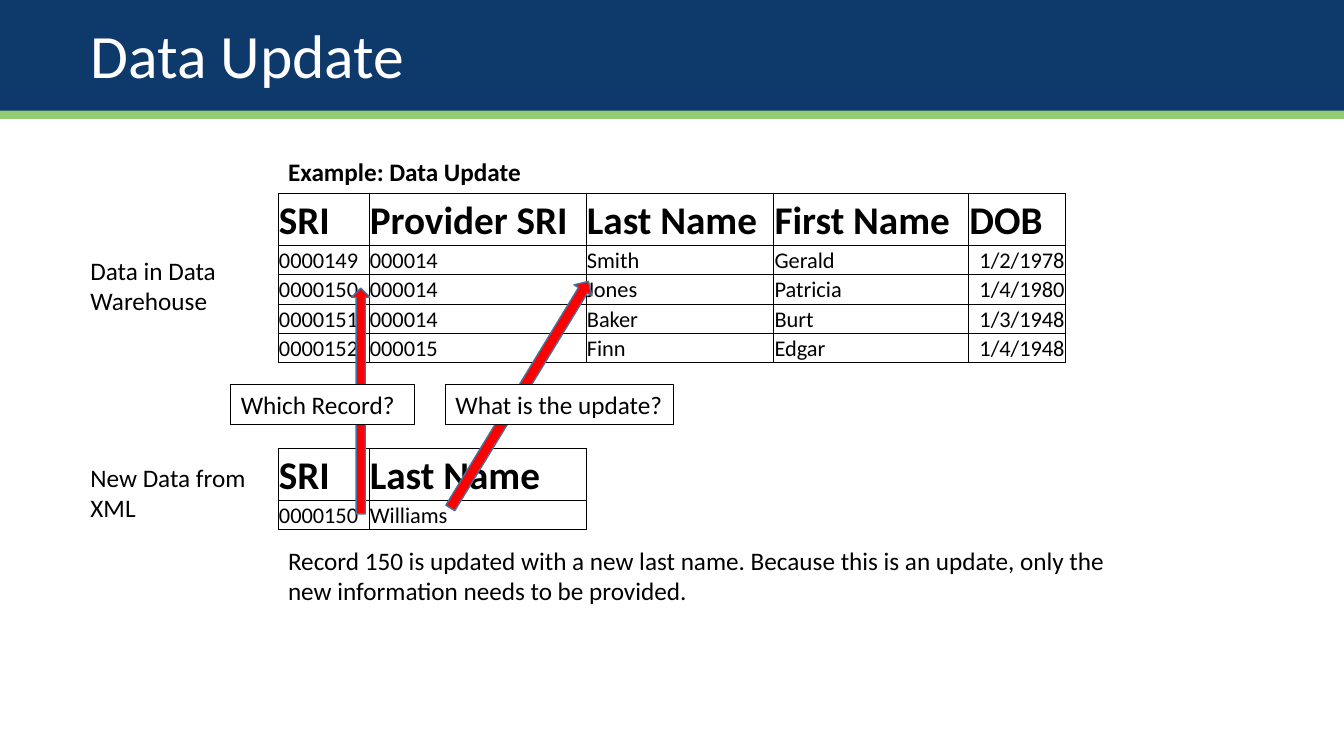
import math
from dataclasses import dataclass

from lxml import etree
from pptx import Presentation
from pptx.dml.color import RGBColor
from pptx.enum import shapes, text
from pptx.oxml import ns
from pptx.util import Cm, Pt


@dataclass(frozen=True)
class Theme:
    font: str = "Calibri"
    title_size: int = 44
    header_size: int = 28
    body_size: int = 18
    cell_size: int = 16
    navy: str = "0E396B"
    green: str = "94CC75"
    red: str = "FF0000"
    arrow_edge: str = "43739E"
    black: str = "000000"
    white: str = "FFFFFF"


THEME = Theme()
LABEL_LEFT, TABLE_LEFT = 2.03, 7.01
COLUMN_WIDTHS = (2.29, 5.47, 4.73, 4.91, 2.44)
HEADER_HEIGHT, ROW_HEIGHT = 1.3, 0.74
WAREHOUSE = (
    ("SRI", "Provider SRI", "Last Name", "First Name", "DOB"),
    ("0000149", "000014", "Smith", "Gerald", "1/2/1978"),
    ("0000150", "000014", "Jones", "Patricia", "1/4/1980"),
    ("0000151", "000014", "Baker", "Burt", "1/3/1948"),
    ("0000152", "000015", "Finn", "Edgar", "1/4/1948"),
)
XML_UPDATE = (("SRI", "Last Name"), ("0000150", "Williams"))


def style(paragraph, size, color=THEME.black, bold=False):
    font = paragraph.font
    font.name, font.size, font.bold = THEME.font, Pt(size), bold
    font.color.rgb = RGBColor.from_string(color)


def add_block(slide, preset, box, fill, edge=None, edge_width=1):
    """Add a flat preset shape; box is left, top, width, height in cm."""
    block = slide.shapes.add_shape(preset, *map(Cm, box))
    block.shadow.inherit = False
    block.fill.solid()
    block.fill.fore_color.rgb = RGBColor.from_string(fill)
    if edge:
        block.line.color.rgb = RGBColor.from_string(edge)
        block.line.width = Pt(edge_width)
    else:
        block.line.fill.background()
    return block


def write(shape, wording, bold=False):
    frame = shape.text_frame
    frame.word_wrap = True
    frame.auto_size = text.MSO_AUTO_SIZE.SHAPE_TO_FIT_TEXT
    frame.vertical_anchor = text.MSO_ANCHOR.TOP
    paragraph = frame.paragraphs[0]
    paragraph.text = wording
    paragraph.alignment = text.PP_ALIGN.LEFT
    style(paragraph, THEME.body_size, bold=bold)


def add_note(slide, wording, box, bold=False):
    write(slide.shapes.add_textbox(*map(Cm, box)), wording, bold)


def add_question(slide, wording, box):
    write(add_block(slide, shapes.MSO_SHAPE.RECTANGLE, box,
                    THEME.white, THEME.black, 0.75), wording)


def add_block_arrow(slide, tail, tip, thickness):
    """Add a red arrow between two points given in cm."""
    dx, dy = tip[0] - tail[0], tip[1] - tail[1]
    length = math.hypot(dx, dy)
    box = ((tail[0] + tip[0] - length) / 2,
           (tail[1] + tip[1] - thickness) / 2, length, thickness)
    arrow = add_block(slide, shapes.MSO_SHAPE.RIGHT_ARROW, box,
                      THEME.red, THEME.arrow_edge)
    arrow.rotation = math.degrees(math.atan2(dy, dx)) % 360


def draw_borders(cell):
    properties = cell._tc.get_or_add_tcPr()
    for position, side in enumerate(("a:lnL", "a:lnR", "a:lnT", "a:lnB")):
        border = etree.Element(ns.qn(side), w=str(Pt(0.5)))
        fill = etree.SubElement(border, ns.qn("a:solidFill"))
        etree.SubElement(fill, ns.qn("a:srgbClr"), val=THEME.black)
        properties.insert(position, border)


def add_records(slide, records, top):
    """Add a ruled table whose first record is the large header."""
    widths = COLUMN_WIDTHS[:len(records[0])]
    heights = [HEADER_HEIGHT] + [ROW_HEIGHT] * (len(records) - 1)
    table = slide.shapes.add_table(
        len(records), len(widths), Cm(TABLE_LEFT), Cm(top),
        Cm(sum(widths)), Cm(sum(heights))).table
    table.first_row = table.horz_banding = False
    for column, width in zip(table.columns, widths):
        column.width = Cm(width)
    for row, height, record in zip(table.rows, heights, records):
        row.height = Cm(height)
        is_header = record is records[0]
        for cell, heading, value in zip(row.cells, records[0], record):
            cell.margin_left = cell.margin_right = cell.margin_top = Cm(0.02)
            cell.margin_bottom = 0
            cell.vertical_anchor = text.MSO_ANCHOR.BOTTOM
            cell.fill.background()
            draw_borders(cell)
            paragraph = cell.text_frame.paragraphs[0]
            paragraph.text = value
            if heading == "DOB" and not is_header:
                paragraph.alignment = text.PP_ALIGN.RIGHT
            style(paragraph, THEME.header_size if is_header else THEME.cell_size,
                  bold=is_header)


def add_title_banner(slide, wording, width):
    title = slide.shapes.title
    for top, height, color in ((0.23, 2.77, THEME.green), (0, 2.79, THEME.navy)):
        band = add_block(slide, shapes.MSO_SHAPE.RECTANGLE,
                         (0, top, width, height), color)
        title.element.addprevious(band.element)
    title.left, title.top, title.width, title.height = map(
        Cm, (LABEL_LEFT, 0.51, 29.9, 2.69))
    title.text_frame.vertical_anchor = text.MSO_ANCHOR.TOP
    paragraph = title.text_frame.paragraphs[0]
    paragraph.text = wording
    paragraph.alignment = text.PP_ALIGN.LEFT
    paragraph.line_spacing = 0.9
    style(paragraph, THEME.title_size, THEME.white)


def main():
    deck = Presentation()
    deck.slide_width, deck.slide_height = Cm(33.87), Cm(19.05)
    slide = deck.slides.add_slide(deck.slide_layouts.get_by_name("Title Only"))
    add_title_banner(slide, "Data Update", 33.87)
    add_records(slide, WAREHOUSE, 4.88)
    add_note(slide, "Example: Data Update", (TABLE_LEFT, 3.81, 11.68, 1.03), bold=True)
    add_records(slide, XML_UPDATE, 11.3)
    add_block_arrow(slide, (9.09, 12.95), (9.09, 7.26), 0.46)
    add_block_arrow(slide, (11.35, 12.8), (14.83, 7.09), 0.53)
    add_note(slide, "Record 150 is updated with a new last name. Because this is "
             "an update, only the new information needs to be provided.",
             (TABLE_LEFT, 13.61, 22.1, 1.8))
    for label, top in (("Data in Data Warehouse", 6.3), ("New Data from XML", 11.53)):
        add_note(slide, label, (LABEL_LEFT, top, 5.18, 1.8))
    for question, left, width in (("Which Record?", 5.82, 4.62),
                                  ("What is the update?", 11.23, 5.74)):
        add_question(slide, question, (left, 9.68, width, 1.03))
    deck.save("out.pptx")


if __name__ == "__main__":
    main()
